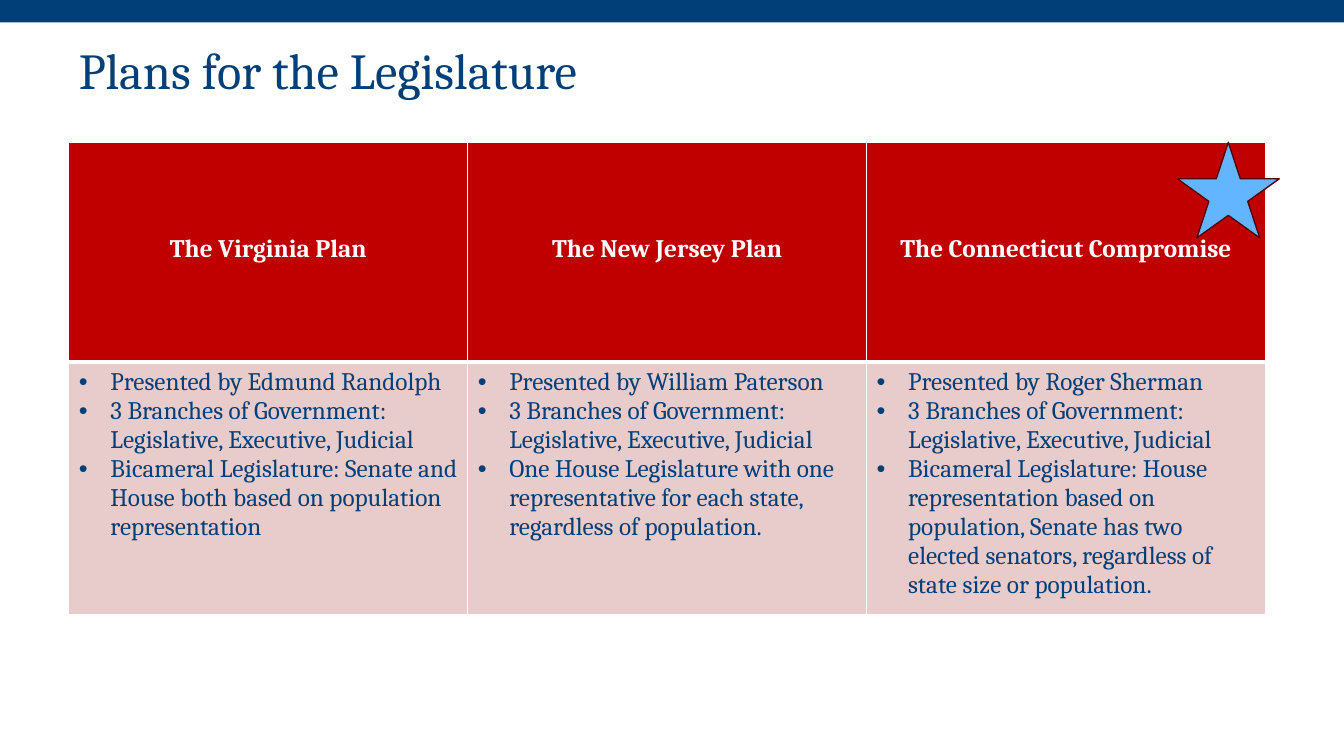
from dataclasses import dataclass

from lxml import etree
from pptx import Presentation
from pptx import util as u
from pptx.dml.color import RGBColor
from pptx.enum import shapes, text
from pptx.oxml import ns


@dataclass(frozen=True)
class Theme:
    font: str = "Cambria"
    navy: str = "003F77"
    red: str = "C00000"
    pink: str = "E8CCCC"
    white: str = "FFFFFF"
    sky: str = "63B5FF"
    maroon: str = "540000"
    title_size: float = 36
    table_size: float = 18


@dataclass(frozen=True)
class Plan:
    name: str
    presenter: str
    legislature: str


@dataclass(frozen=True)
class Box:
    left: float
    top: float
    width: float
    height: float

    def lengths(self) -> tuple:
        return tuple(map(u.Pt, (self.left, self.top, self.width, self.height)))


THEME = Theme()
BRANCHES = "3 Branches of Government: Legislative, Executive, Judicial"
PLANS = [
    Plan("The Virginia Plan", "Edmund Randolph",
         "Bicameral Legislature: Senate and House both based on "
         "population representation"),
    Plan("The New Jersey Plan", "William Paterson",
         "One House Legislature with one representative for each state, "
         "regardless of population."),
    Plan("The Connecticut Compromise", "Roger Sherman",
         "Bicameral Legislature: House representation based on population, "
         "Senate has two elected senators, regardless of state size or population."),
]

SLIDE_WIDTH, SLIDE_HEIGHT = 960, 540
BANNER = Box(0, 0, SLIDE_WIDTH, 16)
TITLE = Box(49.2, 0, 828, 104.4)
COMPARISON = Box(49.2, 101.8, 854.7, 314)
STAR = Box(841, 101.6, 72.8, 68.4)
HEADING_DROP = 65.8
BULLET_INDENT = 22.5
THIN, THICK = 1, 3


def apply(target, formats: dict) -> None:
    for attribute, value in formats.items():
        setattr(target, attribute, value)


def write(paragraph, words: str, size: float, color: str, bold: bool = False) -> None:
    run = paragraph.add_run()
    run.text = words
    apply(run.font, {"name": THEME.font, "size": u.Pt(size), "bold": bold})
    run.font.color.rgb = RGBColor.from_string(color)


def add_figure(slide, kind, box: Box, fill: str, outline: str = ""):
    figure = slide.shapes.add_shape(kind, *box.lengths())
    figure.shadow.inherit = False
    figure.fill.solid()
    figure.fill.fore_color.rgb = RGBColor.from_string(fill)
    if outline:
        figure.line.color.rgb = RGBColor.from_string(outline)
        figure.line.width = u.Pt(THIN)
    else:
        figure.line.fill.background()


def style_cell(cell, fill: str, borders: dict) -> None:
    properties = cell._tc.get_or_add_tcPr()
    for side, width in borders.items():
        line = etree.SubElement(properties, ns.qn(f"a:ln{side}"), w=str(u.Pt(width)))
        solid = etree.SubElement(line, ns.qn("a:solidFill"))
        etree.SubElement(solid, ns.qn("a:srgbClr"), val=THEME.white)
    cell.fill.solid()
    cell.fill.fore_color.rgb = RGBColor.from_string(fill)


def add_bullet(paragraph) -> None:
    properties = paragraph._p.get_or_add_pPr()
    properties.set("marL", str(u.Pt(BULLET_INDENT)))
    properties.set("indent", str(-u.Pt(BULLET_INDENT)))
    etree.SubElement(properties, ns.qn("a:buFont"), typeface="Arial")
    etree.SubElement(properties, ns.qn("a:buChar"), char="•")


def fill_heading(cell, plan: Plan) -> None:
    style_cell(cell, THEME.red, {"L": THIN, "R": THIN, "T": THIN, "B": THICK})
    cell.margin_top = u.Pt(HEADING_DROP)
    heading = cell.text_frame.paragraphs[0]
    heading.alignment = text.PP_ALIGN.CENTER
    write(heading, plan.name, THEME.table_size, THEME.white, bold=True)


def fill_details(cell, plan: Plan) -> None:
    style_cell(cell, THEME.pink, {"L": THIN, "R": THIN, "T": THICK, "B": THIN})
    details = (f"Presented by {plan.presenter}", BRANCHES, plan.legislature)
    for index, detail in enumerate(details):
        frame = cell.text_frame
        point = frame.add_paragraph() if index else frame.paragraphs[0]
        add_bullet(point)
        write(point, detail, THEME.table_size, THEME.navy)


def add_title(slide) -> None:
    frame = slide.shapes.add_textbox(*TITLE.lengths()).text_frame
    apply(frame, {"word_wrap": True, "vertical_anchor": text.MSO_ANCHOR.MIDDLE})
    title = frame.paragraphs[0]
    title.line_spacing = 0.9
    write(title, "Plans for the Legislature", THEME.title_size, THEME.navy)


def add_comparison(slide) -> None:
    comparison = slide.shapes.add_table(2, len(PLANS), *COMPARISON.lengths()).table
    for column, plan in enumerate(PLANS):
        fill_heading(comparison.cell(0, column), plan)
        fill_details(comparison.cell(1, column), plan)


def main() -> None:
    deck = Presentation()
    apply(deck, {"slide_width": u.Pt(SLIDE_WIDTH), "slide_height": u.Pt(SLIDE_HEIGHT)})
    slide = deck.slides.add_slide(deck.slide_layouts[6])

    # Banner and title
    add_figure(slide, shapes.MSO_SHAPE.RECTANGLE, BANNER, THEME.navy)
    add_title(slide)

    # Comparison of the plans, with a star on the adopted one
    add_comparison(slide)
    add_figure(slide, shapes.MSO_SHAPE.STAR_5_POINT, STAR, THEME.sky, THEME.maroon)

    deck.save("out.pptx")


if __name__ == "__main__":
    main()
